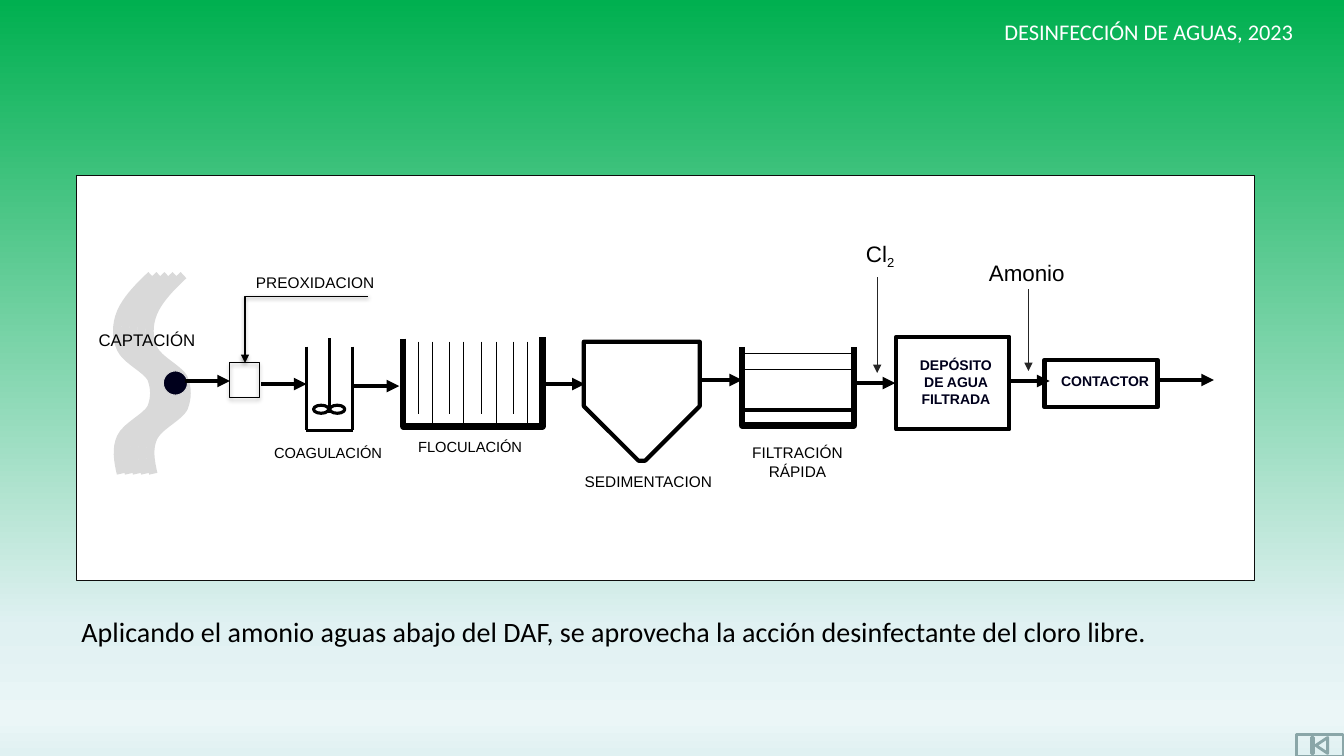
from dataclasses import dataclass

from lxml.etree import SubElement
from pptx import Presentation
from pptx.dml.color import RGBColor
from pptx.enum.shapes import MSO_CONNECTOR, MSO_SHAPE
from pptx.enum.text import PP_ALIGN
from pptx.oxml.ns import qn
from pptx.util import Inches, Pt


@dataclass(frozen=True)
class Theme:
    black: str = "000000"
    white: str = "FFFFFF"
    navy: str = "00001C"
    river: str = "D9D9D9"
    frame: str = "0D0D0D"
    dosing: str = "262626"
    button: str = "8AA6A8"
    gradient: tuple = ((0, "00B050"), (83, "E0F1F2"), (95, "EBF6F7"), (100, "E0F1F2"))
    body_font: str = "Calibri"
    label_font: str = "Arial"
    body_size: float = 20
    header_size: float = 16
    chemical_size: float = 16
    intake_size: float = 12
    label_size: float = 11
    small_size: float = 10.5
    tank_size: float = 10
    hairline: float = 0.75
    thin: float = 1
    medium: float = 2.25
    thick: float = 3
    wall: float = 4.5
    bank: float = 6


class Diagram:
    def __init__(self, page, theme):
        self.page = page
        self.theme = theme

    def background(self):
        fill = self.page.background.fill
        fill.gradient()
        fill.gradient_angle = 270
        stops = next(self.page._element.iter(qn("a:gsLst")))
        for stop in list(stops):
            stops.remove(stop)
        for percent, color in self.theme.gradient:
            stop = SubElement(stops, qn("a:gs"), pos=str(percent * 1000))
            SubElement(stop, qn("a:srgbClr"), val=color)

    def outline(self, shape, width, color=None):
        shape.line.color.rgb = RGBColor.from_string(color or self.theme.black)
        shape.line.width = Pt(width)

    def effects(self, shape, shadow=False):
        """Replace the inherited shadow by none, or by a soft one below."""
        effects = SubElement(shape._element.spPr, qn("a:effectLst"))
        if shadow:
            outer = SubElement(effects, qn("a:outerShdw"), blurRad=str(Pt(3.1)),
                               dist=str(Pt(1.6)), dir="5400000", rotWithShape="0")
            color = SubElement(outer, qn("a:srgbClr"), val=self.theme.black)
            SubElement(color, qn("a:alpha"), val="38000")

    def shape(self, kind, left, top, width, height, weight, color=None, fill=None, shadow=False):
        shape = self.page.shapes.add_shape(
            kind, Inches(left), Inches(top), Inches(width), Inches(height))
        if fill:
            shape.fill.solid()
            shape.fill.fore_color.rgb = RGBColor.from_string(fill)
        else:
            shape.fill.background()
        self.outline(shape, weight, color)
        self.effects(shape, shadow)
        return shape

    def rectangle(self, *place, **style):
        return self.shape(MSO_SHAPE.RECTANGLE, *place, **style)

    def line(self, start, end, weight, color=None, arrow=False, elbow=False):
        connector = self.page.shapes.add_connector(
            MSO_CONNECTOR.ELBOW if elbow else MSO_CONNECTOR.STRAIGHT,
            *map(Inches, (*start, *end)))
        if elbow:
            connector._element.spPr.find(qn("a:prstGeom")).set("prst", "bentConnector2")
        self.outline(connector, weight, color)
        if arrow:
            SubElement(connector.line._get_or_add_ln(), qn("a:tailEnd"), type="triangle")
        self.effects(connector, shadow=elbow)

    def flow(self, left, right, height):
        self.line((left, height), (right, height), self.theme.thick, arrow=True)

    def polyline(self, points, weight, color=None):
        first, *rest = [(Inches(x), Inches(y)) for x, y in points]
        builder = self.page.shapes.build_freeform(*first)
        builder.add_line_segments(rest, close=False)
        shape = builder.convert_to_shape()
        shape.fill.background()
        self.outline(shape, weight, color)
        self.effects(shape)
        return shape

    def curve(self, points, weight, color):
        """Draw chained cubic Béziers: a start, then three points for each segment."""
        shape = self.polyline(points, weight, color)
        segments = list(shape._element.iter(qn("a:lnTo")))
        for index in range(0, len(segments), 3):
            bend = SubElement(segments[index].getparent(), qn("a:cubicBezTo"))
            for segment in segments[index:index + 3]:
                segment.getparent().remove(segment)
                bend.append(segment[0])

    def text(self, words, left, top, width, height, size, color=None, font=None,
             bold=False, centered=False, subscript=None, spacing=0):
        box = self.page.shapes.add_textbox(
            Inches(left), Inches(top), Inches(width), Inches(height))
        box.text_frame.word_wrap = True
        box.text_frame.text = words
        para = box.text_frame.paragraphs[0]
        para.alignment = PP_ALIGN.CENTER if centered else PP_ALIGN.LEFT
        para.space_before = para.space_after = Pt(spacing)
        if subscript:
            span = para.add_run()
            span.text = subscript
            span.font._element.set("baseline", "-25000")
        for span in para.runs:
            span.font.name = font or self.theme.label_font
            span.font.size = Pt(size)
            span.font.bold = bold
            span.font.color.rgb = RGBColor.from_string(color or self.theme.black)


RIVER = [(0.35, 2.73), (0.22, 2.85), (0.1, 2.98), (0.05, 3.1), (0, 3.22), (0, 3.35),
         (0.05, 3.46), (0.1, 3.57), (0.3, 3.66), (0.35, 3.75), (0.39, 3.85), (0.39, 3.95),
         (0.35, 4.05), (0.3, 4.14), (0.1, 4.23), (0.05, 4.34), (0, 4.45), (0.02, 4.57),
         (0.05, 4.7)]


def draw_intake(diagram, theme):
    for left in (1.39, 1.47, 1.15, 1.23, 1.31):
        diagram.curve([(left + x, y) for x, y in RIVER], theme.bank, theme.river)
    diagram.shape(MSO_SHAPE.OVAL, 1.62, 3.68, 0.24, 0.24, theme.hairline,
                  theme.river, fill=theme.navy)
    diagram.line((3.65, 2.94), (2.43, 3.6), theme.thin, arrow=True, elbow=True)
    diagram.rectangle(2.28, 3.6, 0.29, 0.34, theme.hairline, shadow=True)


def draw_coagulation(diagram, theme):
    diagram.line((3.04, 4.27), (3.5, 4.27), theme.medium)
    for side in (3.04, 3.5):
        diagram.line((side, 3.44), (side, 4.27), theme.medium)
    for blade in (3.11, 3.27):
        diagram.shape(MSO_SHAPE.OVAL, blade, 4.02, 0.15, 0.08, theme.medium)
    diagram.line((3.27, 4.1), (3.27, 3.35), theme.medium)


def draw_flocculation(diagram, theme):
    for left in (4.15, 4.46, 4.78, 5.09):
        for x, bottom in ((left, 4.11), (left + 0.14, 4.23)):
            diagram.line((x, 3.39), (x, bottom), theme.hairline)
    diagram.polyline([(4, 3.36), (4, 4.23), (5.38, 4.23), (5.38, 3.34)], theme.wall)


def draw_filtration(diagram, theme):
    for top, height, weight in ((3.51, 0.55, theme.thin), (4.07, 0.16, theme.medium),
                                (3.67, 0.39, theme.hairline)):
        diagram.rectangle(7.36, top, 1.1, height, weight)
    diagram.polyline([(7.36, 3.44), (7.36, 4.22), (8.47, 4.22), (8.47, 3.44)], theme.wall)


def main():
    theme = Theme()
    deck = Presentation()
    deck.slide_width, deck.slide_height = Inches(13.33), Inches(7.5)
    diagram = Diagram(deck.slides.add_slide(deck.slide_layouts[6]), theme)
    diagram.background()
    diagram.shape(MSO_SHAPE.ACTION_BUTTON_BEGINNING, 12.86, 7.29, 0.46, 0.21, 2, theme.button)
    diagram.text("DESINFECCIÓN DE AGUAS, 2023", 9.81, 0.13, 3.17, 0.37, theme.header_size,
                 theme.white, theme.body_font, centered=True)
    diagram.rectangle(0.76, 1.74, 11.68, 4.02, theme.hairline, color=theme.frame, fill=theme.white)

    draw_intake(diagram, theme)
    draw_coagulation(diagram, theme)
    draw_flocculation(diagram, theme)
    settler = diagram.shape(MSO_SHAPE.SNIP_2_SAME_RECTANGLE, 5.79, 3.39, 1.15, 1.18, theme.thick)
    settler.adjustments[0], settler.adjustments[1] = 0.471, 0
    settler.rotation = 180
    draw_filtration(diagram, theme)
    diagram.rectangle(8.89, 3.34, 1.12, 0.92, theme.thick)
    diagram.rectangle(10.36, 3.57, 1.12, 0.47, theme.thick)

    for left, right, height in ((1.83, 2.28, 3.78), (2.59, 3.04, 3.81), (3.51, 3.96, 3.83),
                                (5.39, 5.8, 3.81), (6.95, 7.36, 3.77), (8.47, 8.88, 3.8),
                                (9.99, 10.41, 3.78), (11.47, 12.04, 3.77)):
        diagram.flow(left, right, height)
    for x, top, bottom in ((8.7, 2.75, 3.7), (10.2, 2.87, 3.68)):
        diagram.line((x, top), (x, bottom), theme.hairline, theme.dosing, arrow=True)

    diagram.text("CAPTACIÓN", 0.88, 3.22, 1.26, 0.3, theme.intake_size)
    diagram.text("PREOXIDACION", 2.44, 2.66, 1.5, 0.29, theme.label_size)
    diagram.text("COAGULACIÓN", 2.62, 4.35, 1.42, 0.28, theme.small_size)
    diagram.text("FLOCULACIÓN", 4.05, 4.29, 1.26, 0.28, theme.small_size)
    diagram.text("SEDIMENTACION", 5.7, 4.63, 1.66, 0.29, theme.label_size)
    diagram.text("FILTRACIÓN RÁPIDA", 7.2, 4.35, 1.42, 0.47, theme.label_size, centered=True)
    for words, left, top, height in (("DEPÓSITO DE AGUA FILTRADA", 8.92, 3.49, 0.44),
                                     ("CONTACTOR", 10.4, 3.65, 0.14)):
        diagram.text(words, left, top, 1.12, height, theme.tank_size, theme.navy,
                     bold=True, centered=True)
    diagram.text("Cl", 8.49, 2.33, 0.72, 0.37, theme.chemical_size, subscript="2")
    diagram.text("Amonio", 9.71, 2.52, 1.51, 0.37, theme.chemical_size)
    diagram.text("Aplicando el amonio aguas abajo del DAF, se aprovecha la acción "
                 "desinfectante del cloro libre.", 0.71, 6.05, 11.69, 0.44,
                 theme.body_size, font=theme.body_font, spacing=6)
    deck.save("out.pptx")


if __name__ == "__main__":
    main()
